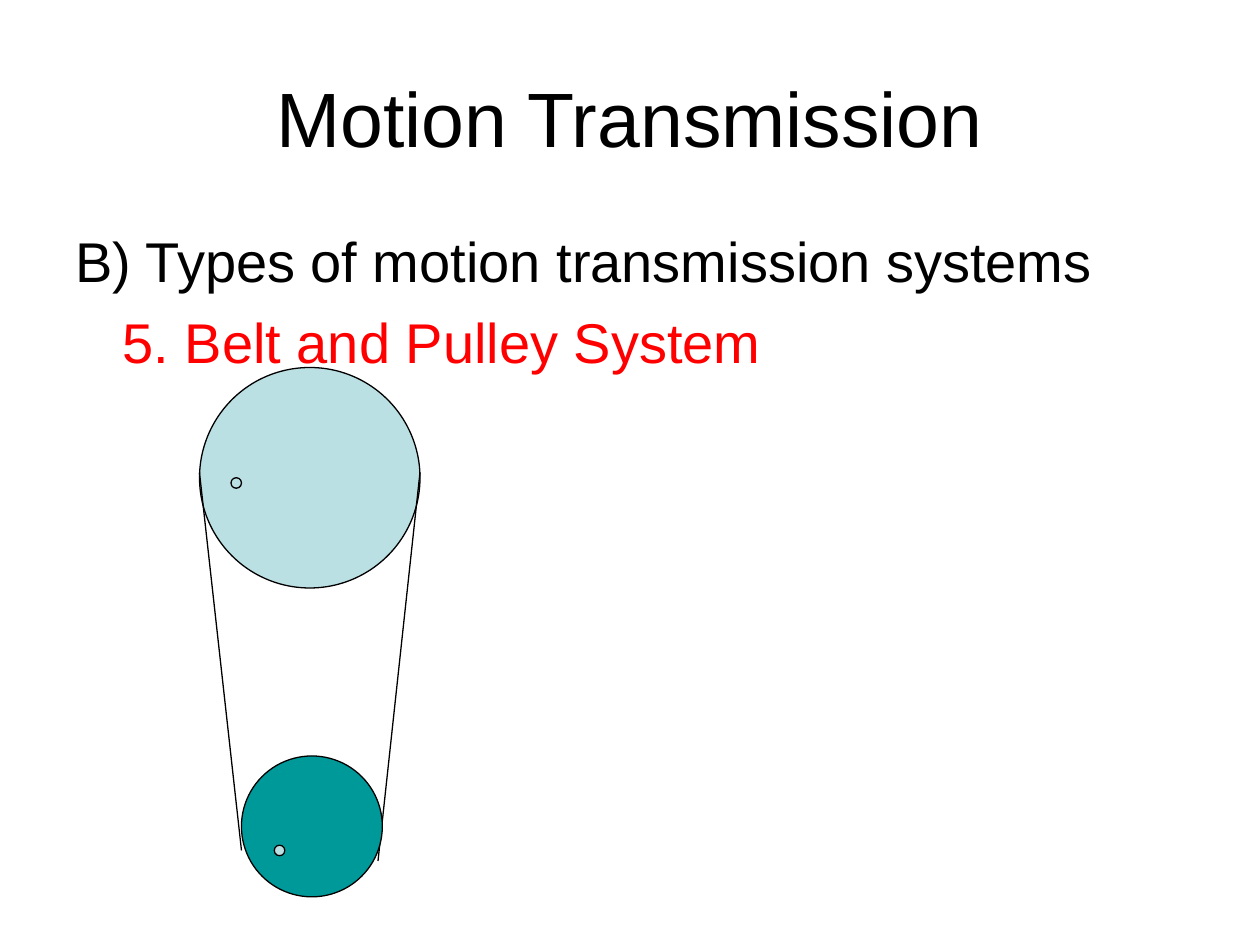
"""Build the slide on the belt and pulley system."""
from lxml import etree
from pptx import Presentation
from pptx.dml.color import RGBColor
from pptx.enum.shapes import MSO_CONNECTOR, MSO_SHAPE
from pptx.enum.text import MSO_ANCHOR, PP_ALIGN
from pptx.oxml.ns import qn
from pptx.util import Pt

OVAL = MSO_SHAPE.OVAL
STRAIGHT = MSO_CONNECTOR.STRAIGHT
MIDDLE = MSO_ANCHOR.MIDDLE
CENTER = PP_ALIGN.CENTER
BLACK, RED, PALE, TEAL = "000000", "FF0000", "BBE0E3", "009999"


def color(hex_code):
    return RGBColor.from_string(hex_code)


def add_pulley(slide, circles):
    pulley = slide.shapes.add_group_shape()
    for left, top, diameter, fill in circles:
        circle = pulley.shapes.add_shape(OVAL, Pt(left), Pt(top), Pt(diameter), Pt(diameter))
        circle.shadow.inherit = False
        circle.fill.solid()
        circle.fill.fore_color.rgb = color(fill)
        circle.line.color.rgb = color(BLACK)
        circle.line.width = Pt(0.75)


prs = Presentation()
prs.slide_width, prs.slide_height = Pt(720), Pt(540)
slide = prs.slides.add_slide(prs.slide_layouts[5])

heading = slide.shapes.title
for name, value in {"left": 36, "top": 21.6, "width": 648, "height": 90}.items():
    setattr(heading, name, Pt(value))
heading.text_frame.text = "Motion Transmission"
heading.text_frame.vertical_anchor = MIDDLE
heading_line = heading.text_frame.paragraphs[0]
heading_line.alignment = CENTER
for name, value in {"name": "Arial", "size": Pt(44)}.items():
    setattr(heading_line.font, name, value)
heading_line.font.color.rgb = color(BLACK)

outline = slide.shapes.add_textbox(Pt(36), Pt(126), Pt(648), Pt(356.4)).text_frame
outline.word_wrap = True
topics = [
    ("B) Types of motion transmission systems", BLACK, -27),
    ("5. Belt and Pulley System", RED, 0),
]
for index, (topic, ink, indent) in enumerate(topics):
    line = outline.paragraphs[0] if index == 0 else outline.add_paragraph()
    line.text = topic
    line.space_before = Pt(7.5)
    for name, value in {"name": "Arial", "size": Pt(32)}.items():
        setattr(line.font, name, value)
    line.font.color.rgb = color(ink)
    properties = line._p.get_or_add_pPr()
    properties.set("marL", str(Pt(27)))
    properties.set("indent", str(Pt(indent)))

add_pulley(slide, [(114, 210, 126, PALE), (132, 273, 6, PALE)])

for start_x, start_y, end_x in [(138, 486, 114), (216, 492, 240)]:
    belt = slide.shapes.add_connector(STRAIGHT, Pt(start_x), Pt(start_y), Pt(end_x), Pt(270))
    belt.line.color.rgb = color(BLACK)
    belt.line.width = Pt(0.75)
    etree.SubElement(belt._element.spPr, qn("a:effectLst"))

add_pulley(slide, [(138, 432, 80.5, TEAL), (156.75, 483, 6, PALE)])

prs.save("out.pptx")
